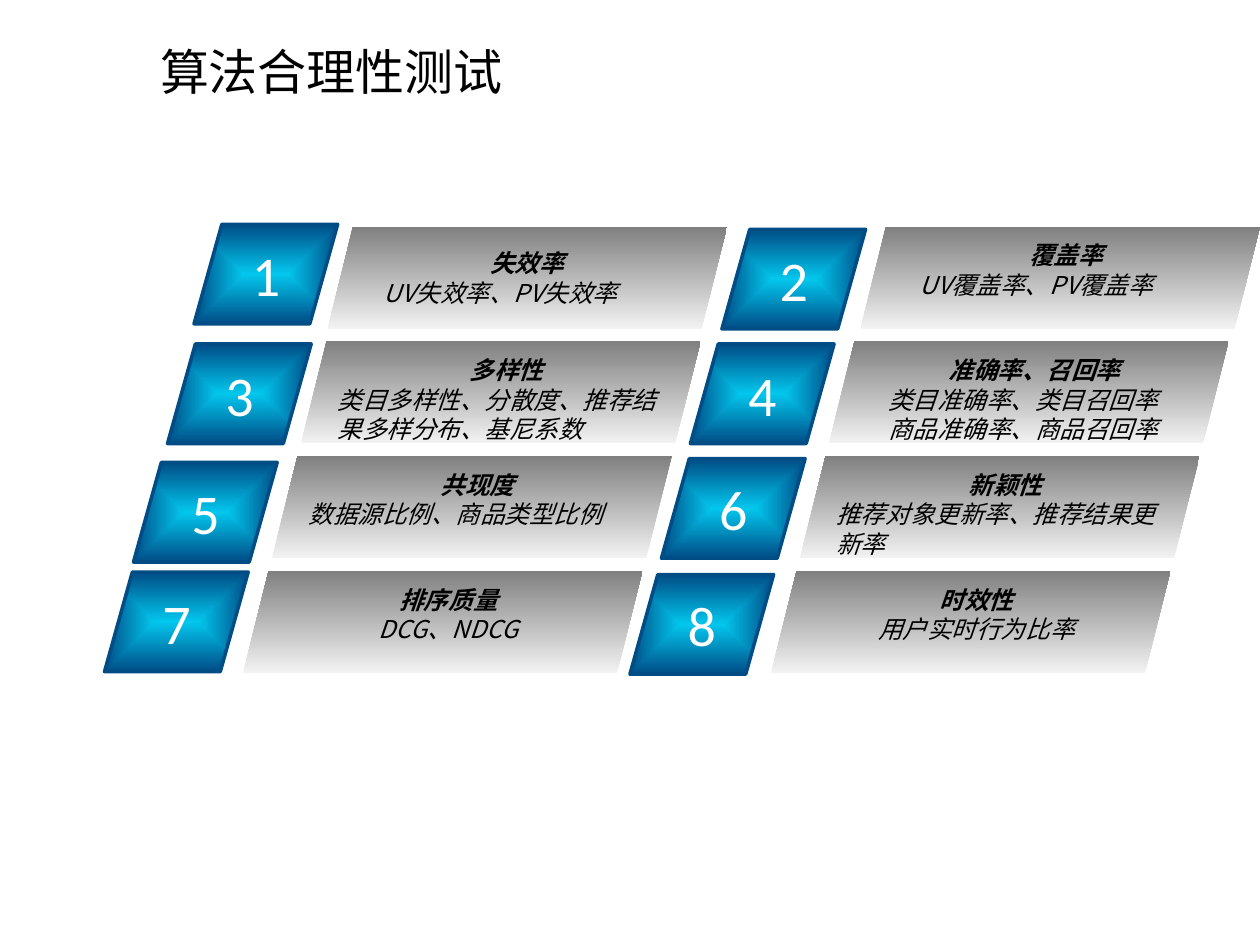
from lxml import etree
from pptx import Presentation
from pptx.dml.color import RGBColor
from pptx.enum.shapes import MSO_SHAPE as Shape
from pptx.enum.text import MSO_ANCHOR as Anchor, MSO_AUTO_SIZE as AutoSize, PP_ALIGN as Align
from pptx.oxml.ns import qn
from pptx.util import Inches, Pt

CJK, LATIN = "Noto Sans CJK SC", "Calibri"
BLACK, WHITE = "000000", "FFFFFF"
LIGHT_GREY, GREY = "F2F2F2", "808080"
CYAN, NAVY = "03C6ED", "004D86"
PANEL_TOP, ROW_STEP = 1.8, 0.91
COLUMN_STEP = 4.19

# Per row: left panel x, then the left and right number tile positions
ROWS = [
    (2.6, (1.54, 1.78), (5.73, 1.82)),
    (2.39, (1.33, 2.73), (5.48, 2.73)),
    (2.16, (1.06, 3.67), (5.25, 3.64)),
    (1.93, (0.83, 4.54), (5.0, 4.56)),
]

# Heading, detail lines, detail alignment, detail indent
METRICS = [
    ("失效率", ["UV失效率、PV失效率"], Align.LEFT, 0),
    ("覆盖率", ["UV覆盖率、PV覆盖率"], Align.LEFT, 0.18),
    ("多样性", ["类目多样性、分散度、推荐结果多样分布、基尼系数"], Align.LEFT, 0),
    ("准确率、召回率", ["类目准确率、类目召回率", "商品准确率、商品召回率"], Align.LEFT, 0.18),
    ("共现度", ["数据源比例、商品类型比例"], Align.LEFT, 0),
    ("新颖性", ["推荐对象更新率、推荐结果更新率"], Align.LEFT, 0),
    ("排序质量", ["DCG、NDCG"], Align.CENTER, 0),
    ("时效性", ["用户实时行为比率"], Align.CENTER, 0),
]


def rgb(color):
    return RGBColor.from_string(color)


def add_run(p, text, size, font=CJK, color=BLACK, bold=False, italic=False):
    r = p.add_run()
    r.text = text
    f = r.font
    f.size, f.name, f.bold, f.italic = Pt(size), font, bold, italic
    f.color.rgb = rgb(color)
    etree.SubElement(r._r.get_or_add_rPr(), qn("a:ea")).set("typeface", font)


def set_gradient(sp, start, end, from_center=False):
    """Two-colour gradient, running upwards or out from the centre."""
    sp.fill.gradient()
    stops = sp.fill.gradient_stops
    for stop, color, position in zip(stops, (start, end), (0, 1)):
        stop.color.rgb = rgb(color)
        stop.position = position
    grad = sp._element.spPr.find(qn("a:gradFill"))
    grad.remove(grad.find(qn("a:lin")))
    if from_center:
        path = etree.SubElement(grad, qn("a:path"), {"path": "shape"})
        sides = dict.fromkeys("ltrb", "50000")
        etree.SubElement(path, qn("a:fillToRect"), sides)
    else:
        etree.SubElement(grad, qn("a:lin"), {"ang": "16200000", "scaled": "0"})


def add_parallelogram(slide, x, y, w, h):
    sp = slide.shapes.add_shape(Shape.PARALLELOGRAM, Inches(x), Inches(y), Inches(w), Inches(h))
    sp.shadow.inherit = False
    return sp


def add_text_frame(slide, x, y, w, h):
    box = slide.shapes.add_textbox(Inches(x), Inches(y), Inches(w), Inches(h))
    tf = box.text_frame
    tf.word_wrap = True
    tf.auto_size = AutoSize.SHAPE_TO_FIT_TEXT
    return tf


def add_title(slide, text):
    title = slide.shapes.title
    title.left, title.top = Inches(1.17), Inches(0.13)
    title.width, title.height = Inches(8.83), Inches(0.86)
    tf = title.text_frame
    tf.vertical_anchor = Anchor.MIDDLE
    p = tf.paragraphs[0]
    p.alignment = Align.LEFT
    add_run(p, text, 28)


def add_number_tile(slide, x, y, number):
    sp = add_parallelogram(slide, x, y, 1.14, 0.79)
    sp.adjustments[0] = 0.28
    set_gradient(sp, CYAN, NAVY, from_center=True)
    sp.line.color.rgb = rgb(NAVY)
    sp.line.width = Pt(2)
    tf = add_text_frame(slide, x + 0.36, y + 0.08, 0.43, 0.64)
    add_run(tf.paragraphs[0], str(number), 32, LATIN, WHITE)


def add_panel(slide, x, y):
    sp = add_parallelogram(slide, x, y, 3.17, 0.81)
    set_gradient(sp, LIGHT_GREY, GREY)
    sp.line.fill.background()
    return sp


def write_metric(tf, heading, details, alignment, indent):
    p = tf.paragraphs[0]
    p.alignment = Align.CENTER
    add_run(p, heading, 14, bold=True, italic=True)
    for detail in details:
        p = tf.add_paragraph()
        p.alignment = alignment
        if indent:
            p._p.get_or_add_pPr().set("marL", str(Inches(indent)))
        add_run(p, detail, 14, italic=True)


def main():
    prs = Presentation()
    prs.slide_width, prs.slide_height = Inches(10), Inches(7.5)
    slide = prs.slides.add_slide(prs.slide_layouts[5])
    add_title(slide, "算法合理性测试")

    for i, metric in enumerate(METRICS):
        row, column = divmod(i, 2)
        panel_x, *tiles = ROWS[row]
        x = panel_x + column * COLUMN_STEP
        if i == 1:
            x = 6.83  # flush with the slide's right edge
        y = PANEL_TOP + row * ROW_STEP
        panel = add_panel(slide, x, y)
        # The first panel holds its own text, centred vertically
        if i == 0:
            tf = panel.text_frame
            tf.vertical_anchor = Anchor.MIDDLE
        else:
            lines = 1 + len(metric[1])
            tf = add_text_frame(slide, x + 0.19, y + 0.06, 2.88, 0.1 + 0.235 * lines)
        write_metric(tf, *metric)
        add_number_tile(slide, *tiles[column], i + 1)

    prs.save("out.pptx")


if __name__ == "__main__":
    main()
